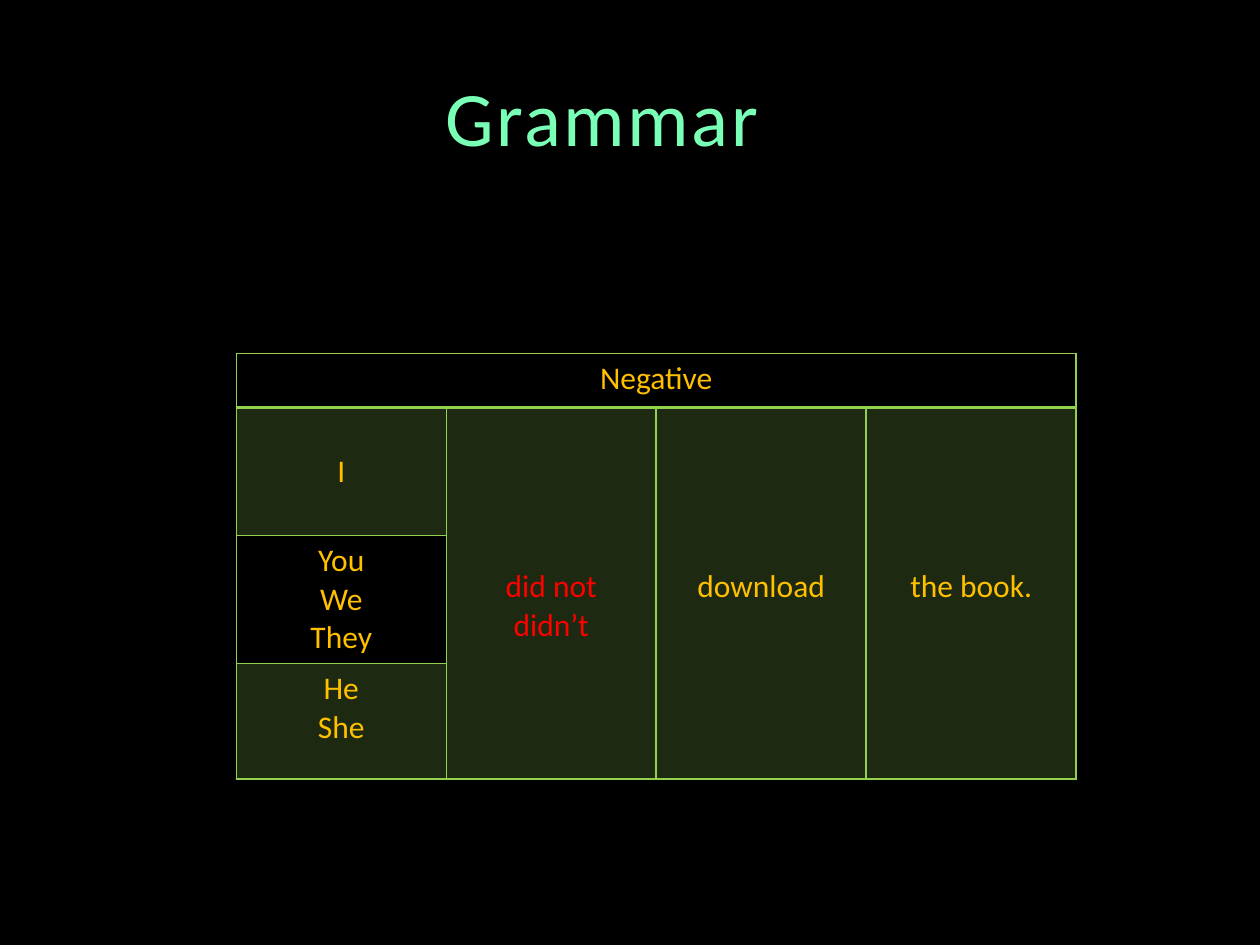
from pptx import Presentation
from pptx.dml.color import RGBColor
from pptx.enum.text import MSO_ANCHOR, PP_ALIGN
from pptx.oxml import parse_xml
from pptx.oxml.ns import nsdecls, qn
from pptx.util import Pt
from lxml.etree import SubElement

HEX = {"back": "000000", "title": "79FFB6", "text": "FFC000",
       "verb": "FF0000", "line": "92D050"}
COLOR = {name: RGBColor.from_string(code) for name, code in HEX.items()}


def add_border(cell, side, width):
    cell._tc.get_or_add_tcPr().append(parse_xml(
        f'<a:ln{side} {nsdecls("a")} w="{Pt(width)}"><a:solidFill>'
        f'<a:srgbClr val="{HEX["line"]}"/></a:solidFill></a:ln{side}>'))


def write(frame, text, size, color):
    frame.text = text
    for para in frame.paragraphs:
        para.alignment = PP_ALIGN.CENTER
        para.font.size = Pt(size)
        para.font.name = "Calibri"
        para.font.color.rgb = COLOR[color]


deck = Presentation()
deck.slide_width, deck.slide_height = Pt(720), Pt(540)
slide = deck.slides.add_slide(deck.slide_layouts[5])
slide.background.fill.solid()
slide.background.fill.fore_color.rgb = COLOR["back"]

# Table
heights = [31, 73.1, 73.1, 66]
table = slide.shapes.add_table(4, 4, Pt(135), Pt(202), Pt(480), Pt(sum(heights))).table
table.first_row = table.horz_banding = False
for col in table.columns:
    col.width = Pt(120)
for row, height in zip(table.rows, heights):
    row.height = Pt(height)

for r in range(4):
    for c in range(4):
        cell = table.cell(r, c)
        for side in "LRTB":
            thick = (r, side) in [(0, "B"), (1, "T")]
            add_border(cell, side, 2 if thick else 1)
        if r == 0 or (r, c) == (2, 0):
            cell.fill.background()
        else:
            cell.fill.solid()
            cell.fill.fore_color.rgb = COLOR["line"]
            tint = cell._tc.tcPr.find(qn("a:solidFill"))[0]
            SubElement(tint, qn("a:alpha"), val="20000")

table.cell(0, 0).merge(table.cell(0, 3))
for c in range(1, 4):
    table.cell(1, c).merge(table.cell(3, c))
    table.cell(1, c).margin_top = Pt(91.5)

words = [(0, 0, "Negative", "text"), (1, 0, "I", "text"),
         (2, 0, "You\nWe\nThey", "text"), (3, 0, "He\nShe", "text"),
         (1, 1, "did not\ndidn’t", "verb"), (1, 2, "download", "text"),
         (1, 3, "the book.", "text")]
for r, c, text, color in words:
    write(table.cell(r, c).text_frame, text, 18, color)
table.cell(1, 0).vertical_anchor = MSO_ANCHOR.MIDDLE

# Title
title = slide.shapes.title
title.left, title.top, title.width, title.height = Pt(20), Pt(21), Pt(648), Pt(90)
title.text_frame.vertical_anchor = MSO_ANCHOR.MIDDLE
write(title.text_frame, "Grammar", 44, "title")
title.text_frame.paragraphs[0].runs[0]._r.get_or_add_rPr().set("spc", "150")

deck.save("out.pptx")
